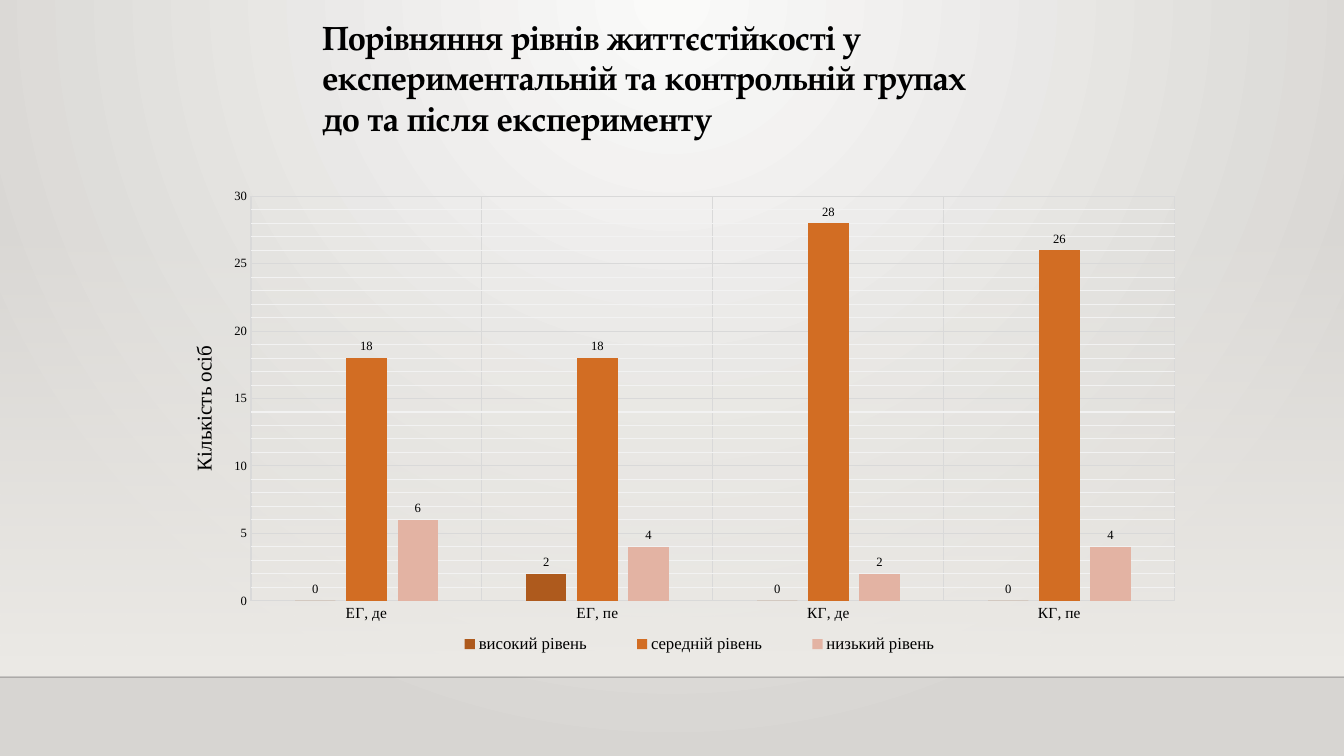
from lxml import etree
from pptx import Presentation
from pptx.chart import data as chart_data
from pptx.dml.color import RGBColor
from pptx.enum import chart as kinds, shapes, text
from pptx.oxml import ns, parse_xml
from pptx.util import Pt

SERIF = "Times New Roman"
BLACK = "000000"
GRID = "D9D9D9"
CHART_WIDTH = 739.4
CHART_HEIGHT = 347
GROUPS = ["ЕГ, де", "ЕГ, пе", "КГ, де", "КГ, пе"]
LEVELS = [
    ("високий рівень", (0, 2, 0, 0), "AE5A1D"),
    ("середній рівень", (18, 18, 28, 26), "D26D23"),
    ("низький рівень", (6, 4, 2, 4), "E3B3A3"),
]


def color(value):
    return RGBColor.from_string(value)


def set_font(font, size, name=SERIF, bold=False):
    font.size = Pt(size)
    font.name = name
    font.bold = bold
    font.color.rgb = color(BLACK)


def set_line(line, value, width=0.75):
    line.color.rgb = color(value)
    line.width = Pt(width)


def add_alpha(element, percent):
    for tint in element.iter(ns.qn("a:srgbClr")):
        etree.SubElement(tint, ns.qn("a:alpha")).set("val", str(percent * 1000))


def set_gradient(fill, first, last):
    fill.gradient()
    for stop, value, position in zip(fill.gradient_stops, (first, last), (0, 1)):
        stop.color.rgb = color(value)
        stop.position = position


def paint_background(page):
    set_gradient(page.background.fill, "FAFAF9", "D7D5D2")
    linear = next(page.element.iter(ns.qn("a:lin")))
    circle = parse_xml(
        f'<a:path {ns.nsdecls("a")} path="circle">'
        '<a:fillToRect l="43000" t="0" r="43000" b="100000"/></a:path>'
    )
    linear.getparent().replace(linear, circle)


def add_wall(page):
    wall = page.shapes.add_shape(
        shapes.MSO_SHAPE.RECTANGLE, 0, Pt(158.4), Pt(960), Pt(324)
    )
    wall.shadow.inherit = False
    wall.line.fill.background()
    set_gradient(wall.fill, "EDEBE7", "EDEBE7")
    wall.fill.gradient_angle = 270
    add_alpha(next(wall.element.iter(ns.qn("a:gs"))), 0)


def add_floor_line(page):
    edge = page.shapes.add_connector(
        shapes.MSO_CONNECTOR.STRAIGHT, 0, Pt(483.8), Pt(960), Pt(483.8)
    )
    set_line(edge.line, "000001", 1)
    properties = edge.element.spPr
    add_alpha(properties, 20)
    etree.SubElement(properties, ns.qn("a:effectLst"))


def add_title(page, words):
    box = page.shapes.add_textbox(Pt(223.2), Pt(8.6), Pt(481), Pt(94.3))
    frame = box.text_frame
    frame.word_wrap = True
    frame.auto_size = text.MSO_AUTO_SIZE.SHAPE_TO_FIT_TEXT
    para = frame.paragraphs[0]
    para.text = words
    para.space_after = Pt(10)
    set_font(para.font, 24, "TeX Gyre Pagella", True)


def place(element, index, left, top, width=None, height=None):
    for old in element.findall(ns.qn("c:layout")):
        element.remove(old)
    lengths = {
        "x": left / CHART_WIDTH,
        "y": top / CHART_HEIGHT,
    }
    if width:
        lengths.update(w=width / CHART_WIDTH, h=height / CHART_HEIGHT)
    sizes = "".join(f'<c:{key} val="{value}"/>' for key, value in lengths.items())
    target = '<c:layoutTarget val="inner"/>' if index == 0 else ""
    element.insert(index, parse_xml(
        f'<c:layout {ns.nsdecls("c")}><c:manualLayout>{target}'
        f'<c:xMode val="edge"/><c:yMode val="edge"/>{sizes}'
        "</c:manualLayout></c:layout>"
    ))


def style_axis(axis, size):
    axis.major_tick_mark = kinds.XL_TICK_MARK.NONE
    axis.minor_tick_mark = kinds.XL_TICK_MARK.NONE
    axis.has_major_gridlines = True
    set_line(axis.major_gridlines.format.line, GRID)
    set_font(axis.tick_labels.font, size)


def add_minor_gridlines(axis, value):
    axis.has_minor_gridlines = True
    gridlines = axis._element.find(ns.qn("c:minorGridlines"))
    gridlines.append(parse_xml(
        f'<c:spPr {ns.nsdecls("c", "a")}><a:ln w="{Pt(0.75)}"><a:solidFill>'
        f'<a:srgbClr val="{value}"/></a:solidFill></a:ln></c:spPr>'
    ))


def style_value_axis(axis):
    style_axis(axis, 9)
    axis.minimum_scale = 0
    axis.maximum_scale = 30
    axis.major_unit = 5
    axis.minor_unit = 1
    add_minor_gridlines(axis, "F2F2F2")
    axis.format.line.fill.background()
    frame = axis.axis_title.text_frame
    para = frame.paragraphs[0]
    para.text = "Кількість осіб"
    set_font(para.font, 15)
    frame._txBody.bodyPr.set("rot", "-5400000")
    place(axis.axis_title._element, 1, 18, 116)


def style_series(series, value):
    series.format.fill.solid()
    series.format.fill.fore_color.rgb = color(value)
    series.invert_if_negative = False
    labels = series.data_labels
    labels.show_value = True
    labels.position = kinds.XL_LABEL_POSITION.OUTSIDE_END
    set_font(labels.font, 9)


def add_level_chart(page):
    source = chart_data.CategoryChartData()
    source.categories = GROUPS
    for name, values, _ in LEVELS:
        source.add_series(name, values)
    chart = page.shapes.add_chart(
        kinds.XL_CHART_TYPE.COLUMN_CLUSTERED,
        Pt(115.2), Pt(128.2), Pt(CHART_WIDTH), Pt(CHART_HEIGHT), source,
    ).chart
    set_font(chart.font, 10)
    chart.has_title = False
    plot = chart.plots[0]
    plot.gap_width = 219
    plot.overlap = -27
    plot.vary_by_categories = False
    for series, (_, _, value) in zip(plot.series, LEVELS):
        style_series(series, value)
    style_axis(chart.category_axis, 11)
    set_line(chart.category_axis.format.line, GRID)
    style_value_axis(chart.value_axis)
    chart.has_legend = True
    chart.legend.position = kinds.XL_LEGEND_POSITION.BOTTOM
    chart.legend.include_in_layout = False
    set_font(chart.legend.font, 12)
    place(chart.legend._element, 1, 185, 320, 399, 24)
    place(chart._chartSpace.chart.plotArea, 0, 64.1, 11.9, 660, 289.2)


def main():
    deck = Presentation()
    deck.slide_width = Pt(960)
    deck.slide_height = Pt(540)
    page = deck.slides.add_slide(deck.slide_layouts[6])
    paint_background(page)
    add_wall(page)
    add_floor_line(page)
    add_level_chart(page)
    add_title(
        page,
        "Порівняння рівнів життєстійкості у експериментальній та "
        "контрольній групах до та після експерименту",
    )
    deck.save("out.pptx")


if __name__ == "__main__":
    main()
